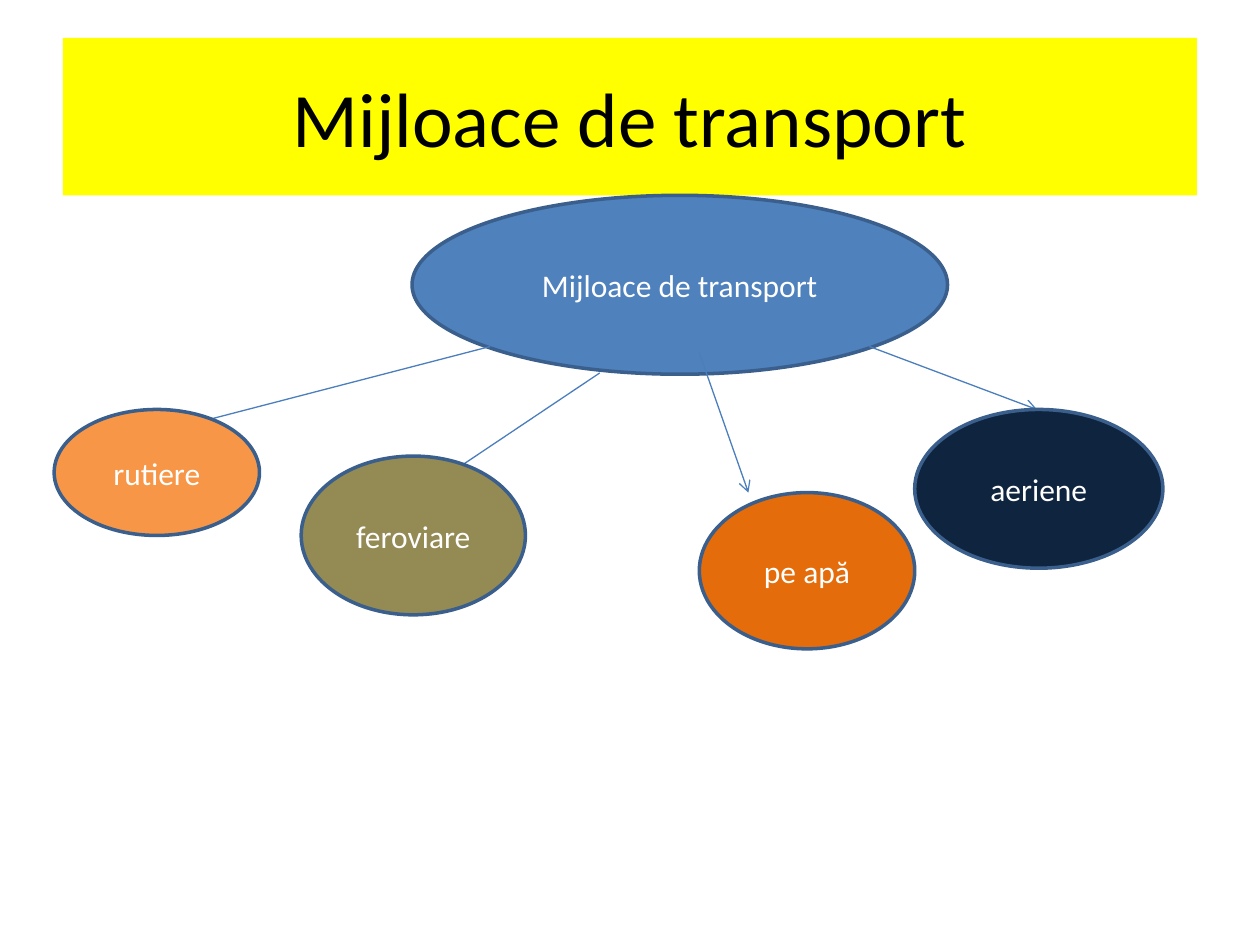
from lxml.etree import SubElement
from pptx import Presentation
from pptx.dml.color import RGBColor
from pptx.enum.shapes import MSO_CONNECTOR, MSO_SHAPE
from pptx.enum.text import MSO_ANCHOR, PP_ALIGN
from pptx.oxml.ns import qn
from pptx.util import Inches, Pt

YELLOW = RGBColor(0xFF, 0xFF, 0x00)
BLACK = RGBColor(0x00, 0x00, 0x00)
WHITE = RGBColor(0xFF, 0xFF, 0xFF)
BLUE = RGBColor(0x4F, 0x81, 0xBD)
ORANGE = RGBColor(0xF7, 0x96, 0x46)
OLIVE = RGBColor(0x94, 0x8A, 0x54)
DARK_ORANGE = RGBColor(0xE4, 0x6C, 0x0A)
NAVY = RGBColor(0x0F, 0x24, 0x3E)
OUTLINE = RGBColor(0x3A, 0x5F, 0x8C)
ARROW = RGBColor(0x4B, 0x7E, 0xBC)

TOPIC = "Mijloace de transport"
TITLE_BOX = (0.5, 0.3, 9, 1.25)
TOPIC_BOX = (3.27, 1.55, 4.25, 1.42)

# label, fill, (left, top, width, height), arrow start, arrow end
BRANCHES = [
    ("rutiere", ORANGE, (0.43, 3.25, 1.63, 1), (3.89, 2.75), (1.54, 3.36)),
    ("feroviare", OLIVE, (2.39, 3.62, 1.78, 1.26), (4.76, 2.96), (3.58, 3.75)),
    ("pe apă", DARK_ORANGE, (5.55, 3.91, 1.71, 1.24), (5.55, 2.8), (5.94, 3.91)),
    ("aeriene", NAVY, (7.26, 3.25, 1.97, 1.26), (6.9, 2.75), (8.23, 3.25)),
]


def add_labelled_shape(page, kind, box, fill, text, size, color):
    shape = page.shapes.add_shape(kind, *map(Inches, box))
    shape.shadow.inherit = False
    shape.fill.solid()
    shape.fill.fore_color.rgb = fill
    frame = shape.text_frame
    frame.word_wrap = True
    frame.vertical_anchor = MSO_ANCHOR.MIDDLE
    para = frame.paragraphs[0]
    para.alignment = PP_ALIGN.CENTER
    span = para.add_run()
    span.text = text
    span.font.name = "Calibri"
    span.font.size = Pt(size)
    span.font.color.rgb = color
    return shape


def add_ellipse(page, box, fill, text):
    ellipse = add_labelled_shape(page, MSO_SHAPE.OVAL, box, fill, text, 18, WHITE)
    ellipse.line.color.rgb = OUTLINE
    ellipse.line.width = Pt(2)


def add_arrow(page, start, end):
    arrow = page.shapes.add_connector(
        MSO_CONNECTOR.STRAIGHT, *map(Inches, start + end))
    arrow.line.color.rgb = ARROW
    arrow.line.width = Pt(0.75)
    SubElement(arrow.line._get_or_add_ln(), qn("a:tailEnd"), type="arrow")
    SubElement(arrow._element.spPr, qn("a:effectLst"))


def main():
    deck = Presentation()
    deck.slide_width, deck.slide_height = Inches(10), Inches(7.5)
    page = deck.slides.add_slide(deck.slide_layouts[6])

    title = add_labelled_shape(
        page, MSO_SHAPE.RECTANGLE, TITLE_BOX, YELLOW, TOPIC, 44, BLACK)
    title.line.fill.background()

    add_ellipse(page, TOPIC_BOX, BLUE, TOPIC)
    for label, fill, box, start, end in BRANCHES:
        add_arrow(page, start, end)
        add_ellipse(page, box, fill, label)

    deck.save("out.pptx")


if __name__ == "__main__":
    main()
